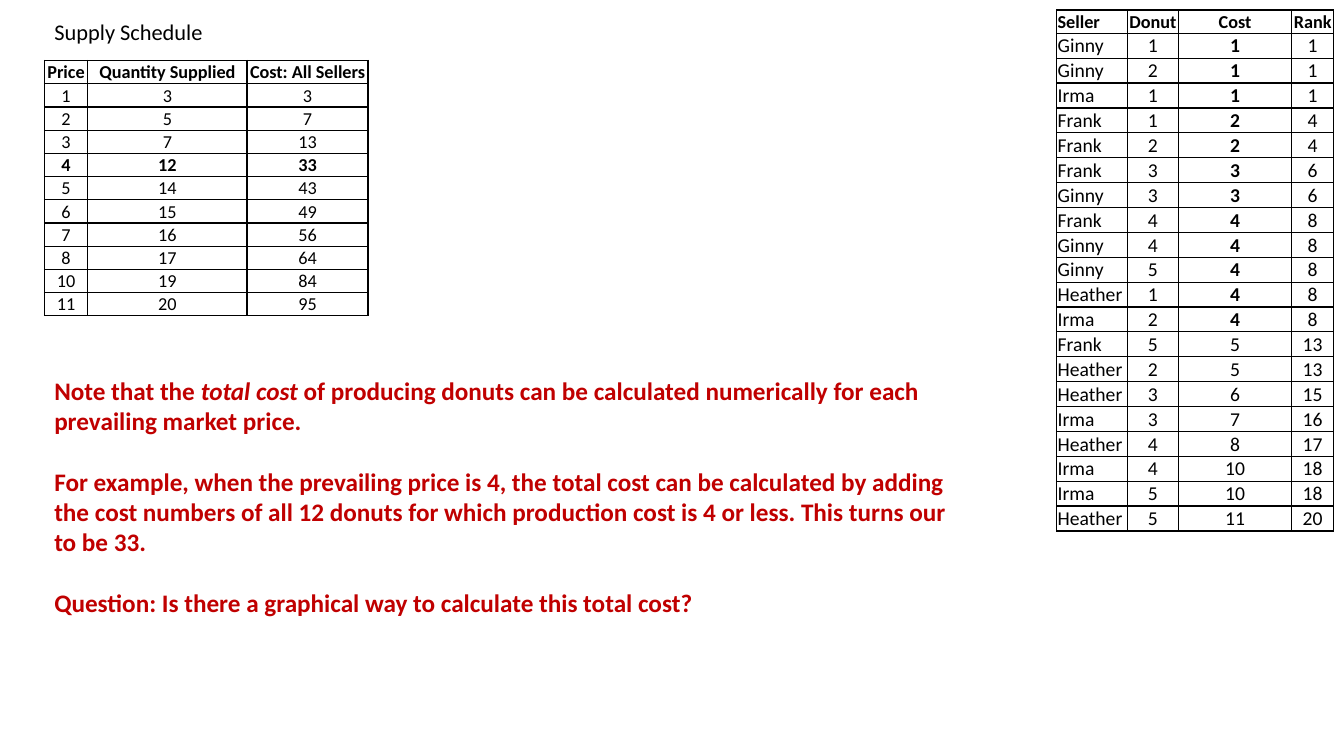
from dataclasses import dataclass

from lxml import etree
from pptx import Presentation
from pptx.dml.color import RGBColor
from pptx.enum.text import MSO_ANCHOR, MSO_AUTO_SIZE, PP_ALIGN
from pptx.oxml.ns import qn
from pptx.slide import Slide
from pptx.table import _Cell
from pptx.text.text import Font
from pptx.util import Inches, Pt

LEFT, CENTER = PP_ALIGN.LEFT, PP_ALIGN.CENTER
TOP, BOTTOM = MSO_ANCHOR.TOP, MSO_ANCHOR.BOTTOM
NO_AUTOFIT = MSO_AUTO_SIZE.NONE
TITLE_ONLY = 5
FONT = "Calibri"
COLORS = {"text": "000000", "border": "000000", "note": "C00000"}
ROW_HEIGHT = 0.2
HEADER_SIZE = 13
MARKET_PRICE = 4


@dataclass
class Grid:
    left: float
    top: float
    widths: list[float]
    header: tuple[str, ...]
    rows: list[tuple]
    size: int
    aligns: list[PP_ALIGN]
    bold_cells: set[tuple[int, int]]


SUPPLY = [
    (1, 3, 3), (2, 5, 7), (3, 7, 13), (4, 12, 33), (5, 14, 43),
    (6, 15, 49), (7, 16, 56), (8, 17, 64), (10, 19, 84), (11, 20, 95),
]
DONUTS = [
    ("Ginny", 1, 1, 1), ("Ginny", 2, 1, 1), ("Irma", 1, 1, 1),
    ("Frank", 1, 2, 4), ("Frank", 2, 2, 4), ("Frank", 3, 3, 6),
    ("Ginny", 3, 3, 6), ("Frank", 4, 4, 8), ("Ginny", 4, 4, 8),
    ("Ginny", 5, 4, 8), ("Heather", 1, 4, 8), ("Irma", 2, 4, 8),
    ("Frank", 5, 5, 13), ("Heather", 2, 5, 13), ("Heather", 3, 6, 15),
    ("Irma", 3, 7, 16), ("Heather", 4, 8, 17), ("Irma", 4, 10, 18),
    ("Irma", 5, 10, 18), ("Heather", 5, 11, 20),
]
GRIDS = [
    Grid(0.44, 0.6, [0.43, 1.58, 1.2],
         ("Price", "Quantity Supplied", "Cost: All Sellers"), SUPPLY, 13,
         [CENTER] * 3,
         {(r, c) for r, row in enumerate(SUPPLY, 1) for c in range(3)
          if row[0] == MARKET_PRICE}),
    Grid(10.48, 0.1, [0.7, 0.51, 1.12, 0.42],
         ("Seller", "Donut", "Cost", "Rank"), DONUTS, 14,
         [LEFT] + [CENTER] * 3,
         {(r, 2) for r, row in enumerate(DONUTS, 1) if row[2] <= MARKET_PRICE}),
]
NOTES = [
    [("Note that the ", False), ("total cost", True),
     (" of producing donuts can be calculated numerically for each "
      "prevailing market price.", False)],
    [("For example, when the prevailing price is 4, the total cost can be "
      "calculated by adding the cost numbers of all 12 donuts for which "
      "production cost is 4 or less. This turns our to be 33.", False)],
    [("Question: Is there a graphical way to calculate this total cost?", False)],
]


def style_font(font: Font, size: float, color: str, bold: bool = False) -> None:
    font.name = FONT
    font.size = Pt(size)
    font.bold = bold
    font.color.rgb = RGBColor.from_string(COLORS[color])


def add_borders(cell: _Cell) -> None:
    properties = cell._tc.get_or_add_tcPr()
    for side in ("a:lnL", "a:lnR", "a:lnT", "a:lnB"):
        line = etree.SubElement(properties, qn(side), w=str(Pt(1)))
        fill = etree.SubElement(line, qn("a:solidFill"))
        etree.SubElement(fill, qn("a:srgbClr"), val=COLORS["border"])


def add_grid(slide: Slide, grid: Grid) -> None:
    lines = [grid.header, *grid.rows]
    table = slide.shapes.add_table(
        len(lines), len(grid.widths), Inches(grid.left), Inches(grid.top),
        Inches(sum(grid.widths)), Inches(ROW_HEIGHT * len(lines))).table
    table.first_row = False
    table.horz_banding = False
    for column, width in zip(table.columns, grid.widths):
        column.width = Inches(width)
    for r, values in enumerate(lines):
        table.rows[r].height = Inches(ROW_HEIGHT)
        for c, value in enumerate(values):
            cell = table.cell(r, c)
            cell.margin_left = cell.margin_right = cell.margin_top = Inches(0.01)
            cell.margin_bottom = 0
            cell.vertical_anchor = BOTTOM
            cell.text = str(value)
            paragraph = cell.text_frame.paragraphs[0]
            paragraph.alignment = grid.aligns[c]
            style_font(paragraph.font, grid.size if r else HEADER_SIZE, "text",
                       r == 0 or (r, c) in grid.bold_cells)
            add_borders(cell)
            cell.fill.background()


def add_title(slide: Slide) -> None:
    title = slide.shapes.title
    title.left, title.top = Inches(0.44), Inches(0.13)
    title.width, title.height = Inches(2.03), Inches(0.37)
    frame = title.text_frame
    frame.text = "Supply Schedule"
    frame.auto_size = NO_AUTOFIT
    frame.vertical_anchor = TOP
    heading = frame.paragraphs[0]
    heading.alignment = LEFT
    heading.line_spacing = 1.0
    heading.space_before = Pt(0)
    style_font(heading.font, 16, "text")


def add_notes(slide: Slide) -> None:
    frame = slide.shapes.add_textbox(
        Inches(0.44), Inches(3.67), Inches(9.23), Inches(2.52)).text_frame
    frame.word_wrap = True
    for index, pieces in enumerate(NOTES):
        paragraph = frame.add_paragraph() if index else frame.paragraphs[0]
        paragraph.space_before = Pt(22 if index else 0)
        style_font(paragraph.font, 18, "note", bold=True)
        for text, italic in pieces:
            run = paragraph.add_run()
            run.text = text
            if italic:
                run.font.italic = True


def main() -> None:
    deck = Presentation()
    deck.slide_width, deck.slide_height = Inches(13.33), Inches(7.5)
    slide = deck.slides.add_slide(deck.slide_layouts[TITLE_ONLY])
    add_title(slide)
    for grid in GRIDS:
        add_grid(slide, grid)
    add_notes(slide)
    deck.save("out.pptx")


if __name__ == "__main__":
    main()
